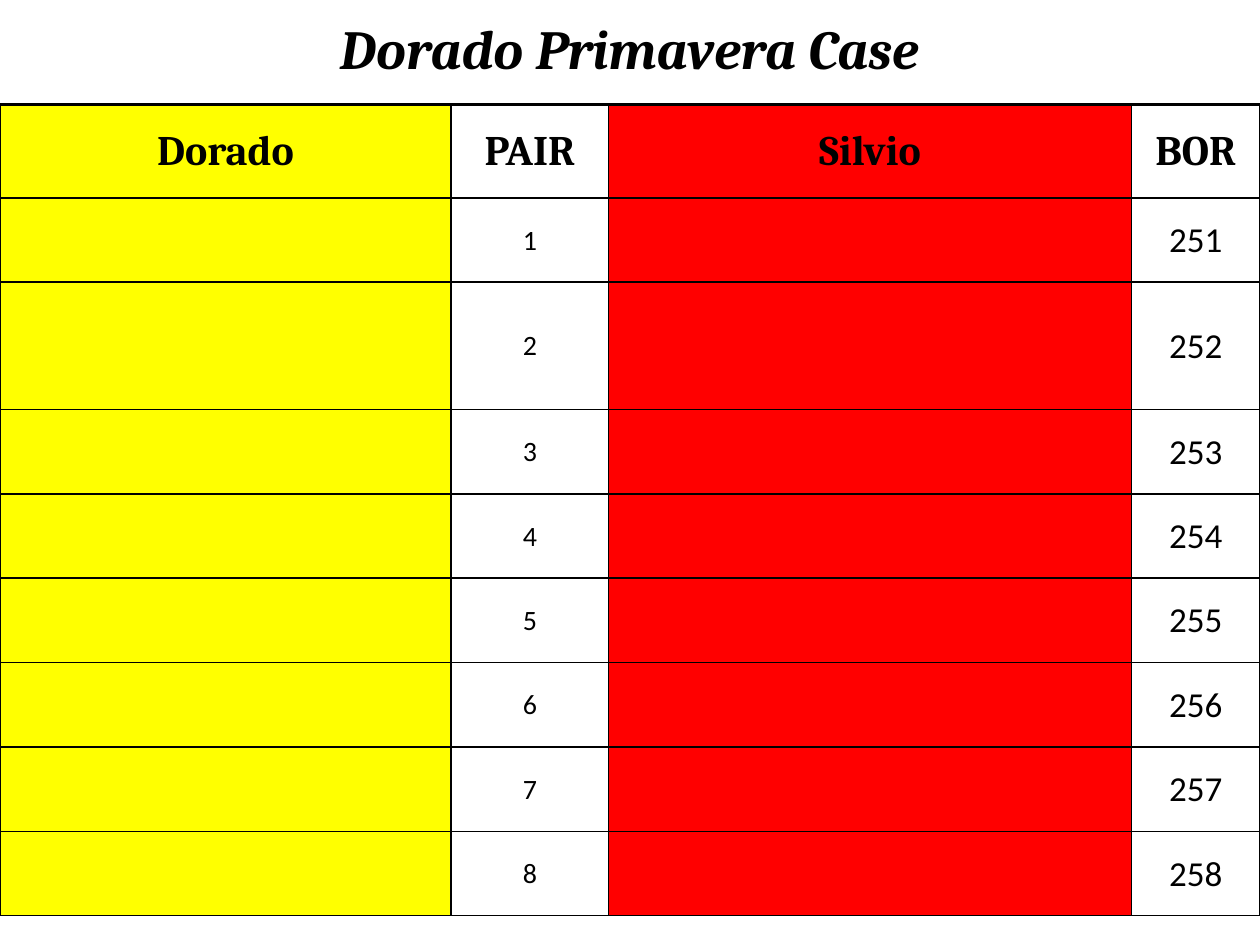
from lxml import etree
from pptx import Presentation
from pptx.dml.color import RGBColor
from pptx.enum.text import MSO_ANCHOR, MSO_AUTO_SIZE, PP_ALIGN
from pptx.oxml.ns import qn
from pptx.util import Inches, Pt

MIDDLE = MSO_ANCHOR.MIDDLE
CENTER = PP_ALIGN.CENTER
NO_FIT = MSO_AUTO_SIZE.NONE

TITLE = "Dorado Primavera Case"
HEADERS = ["Dorado", "PAIR", "Silvio", "BOR"]
ROWS = [["", str(n), "", str(250 + n)] for n in range(1, 9)]
COL_FILLS = ["FFFF00", "FFFFFF", "FF0000", "FFFFFF"]
COL_SIZES = [16, 16, 16, 20]
COL_WIDTHS = [3.58, 1.25, 4.15, 1.02]
ROW_HEIGHTS = [0.74, 0.67, 1.01] + [0.67] * 6
BLACK = "000000"


def rgb(value):
    return RGBColor.from_string(value)


def add_text(tf, text, size, font, bold=False, italic=False):
    p = tf.paragraphs[0]
    p.alignment = CENTER
    r = p.add_run()
    r.text = text
    r.font.size = Pt(size)
    r.font.name = font
    r.font.bold = bold
    r.font.italic = italic
    r.font.color.rgb = rgb(BLACK)


def set_borders(cell, top):
    tc_pr = cell._tc.get_or_add_tcPr()
    for side, width in (("L", 1), ("R", 1), ("T", top), ("B", 1)):
        ln = etree.SubElement(tc_pr, qn("a:ln" + side), w=str(Pt(width)))
        fill = etree.SubElement(ln, qn("a:solidFill"))
        etree.SubElement(fill, qn("a:srgbClr"), val=BLACK)


def fill_cell(cell, text, color, size, font, header):
    set_borders(cell, 1.5 if header else 1)
    cell.fill.solid()
    cell.fill.fore_color.rgb = rgb(color)
    if text:
        cell.vertical_anchor = MIDDLE
        cell.margin_left = cell.margin_right = cell.margin_top = Inches(0.01)
        cell.margin_bottom = 0
        add_text(cell.text_frame, text, size, font, bold=header)


def main():
    prs = Presentation()
    prs.slide_width, prs.slide_height = Inches(10), Inches(7.5)
    s = prs.slides.add_slide(prs.slide_layouts[5])

    title = s.shapes.title
    title.left, title.top = Inches(1.66), Inches(0.17)
    title.width, title.height = Inches(6.67), Inches(0.42)
    tf = title.text_frame
    tf.auto_size = NO_FIT
    tf.vertical_anchor = MIDDLE
    add_text(tf, TITLE, 31.5, "Cambria", bold=True, italic=True)

    grid = [HEADERS] + ROWS
    frame = s.shapes.add_table(
        len(grid), len(HEADERS), 0, Inches(0.83),
        Inches(sum(COL_WIDTHS)), Inches(sum(ROW_HEIGHTS)))
    table = frame.table
    table.first_row = table.horz_banding = False
    for col, width in zip(table.columns, COL_WIDTHS):
        col.width = Inches(width)
    for i, (row, height) in enumerate(zip(table.rows, ROW_HEIGHTS)):
        row.height = Inches(height)
        header = i == 0
        for j, cell in enumerate(row.cells):
            size = 24 if header else COL_SIZES[j]
            font = "Cambria" if header else "Calibri"
            fill_cell(cell, grid[i][j], COL_FILLS[j], size, font, header)

    prs.save("out.pptx")


if __name__ == "__main__":
    main()
